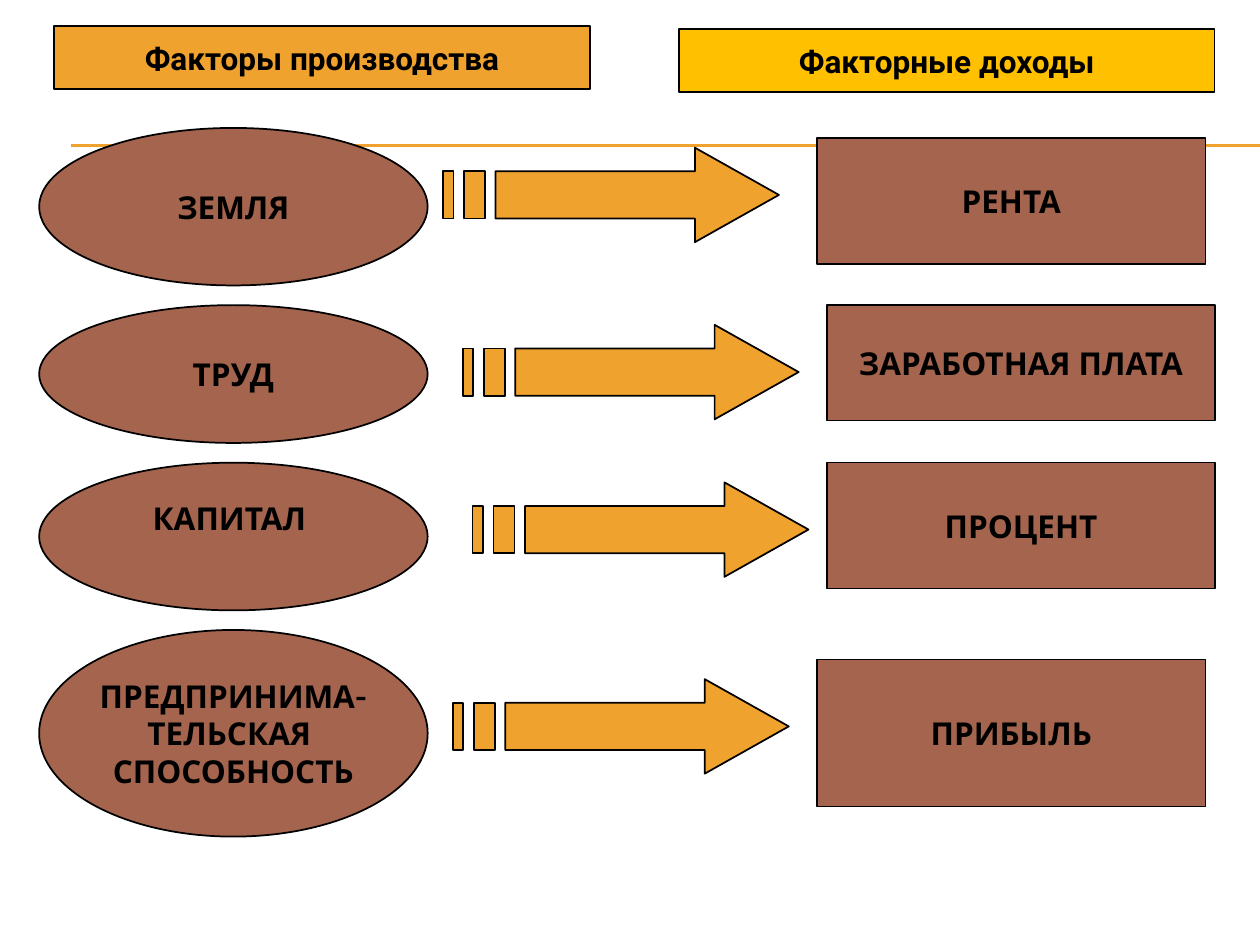
from lxml import etree
from pptx import Presentation
from pptx.dml.color import RGBColor
from pptx.enum.shapes import MSO_CONNECTOR, MSO_SHAPE as Shape
from pptx.enum.text import MSO_ANCHOR as Anchor, PP_ALIGN as Align
from pptx.oxml.ns import qn
from pptx.util import Pt

BLACK = RGBColor(0x00, 0x00, 0x00)
ORANGE = RGBColor(0xF0, 0xA2, 0x2E)
YELLOW = RGBColor(0xFF, 0xC0, 0x00)
BROWN = RGBColor(0xA5, 0x64, 0x4E)

FACTOR_LEFT, CARD_WIDTH = 22.4, 222
BLANK_LINE = 21.5

HEADINGS = [
    ("Факторы производства", 31, 14.9, ORANGE),
    ("Факторные доходы", 388, 16.7, YELLOW),
]

FACTORS = [
    ("ЗЕМЛЯ", 73.1, 90, 0),
    ("ТРУД", 174.4, 78.75, 0),
    ("КАПИТАЛ ", 264.4, 84.4, BLANK_LINE),
    ("ПРЕДПРИНИМА-\nТЕЛЬСКАЯ \nСПОСОБНОСТЬ", 360, 118.1, 0),
]

INCOMES = [
    ("РЕНТА", 466.9, 78.75, 72),
    ("ЗАРАБОТНАЯ ПЛАТА", 472.5, 174.4, 66),
    ("ПРОЦЕНТ", 472.5, 264.4, 72),
    ("ПРИБЫЛЬ", 466.9, 376.9, 84),
]

ARROWS = [(253.1, 84.4), (264.4, 185.6), (270, 275.6), (258.75, 388.1)]

SHAFT_TOP, SHAFT_BOTTOM = 13.5, 40.5
ARROW_BODY = [(144, 0), (144, SHAFT_TOP), (30, SHAFT_TOP), (30, SHAFT_BOTTOM),
              (144, SHAFT_BOTTOM), (144, 54), (192, 27)]
STRIPES = [(12, 24), (0, 6)]


def paint(shape, color):
    shape.shadow.inherit = False
    shape.fill.solid()
    shape.fill.fore_color.rgb = color
    shape.line.color.rgb = BLACK
    shape.line.width = Pt(1)


def write(shape, text, font="Karla", size=18, color=BLACK, bold=True, lift=0):
    frame = shape.text_frame
    frame.word_wrap = False
    frame.vertical_anchor = Anchor.MIDDLE
    frame.margin_bottom = Pt(3.6 + lift)
    frame.text = text
    for paragraph in frame.paragraphs:
        paragraph.alignment = Align.CENTER
        for run in paragraph.runs:
            run.font.name = font
            run.font.size = Pt(size)
            run.font.bold = bold
            run.font.color.rgb = color


def add_card(slide, kind, left, top, width, height, color, text, **style):
    card = slide.shapes.add_shape(kind, Pt(left), Pt(top), Pt(width), Pt(height))
    paint(card, color)
    write(card, text, **style)


def add_rule(slide, y):
    rule = slide.shapes.add_connector(
        MSO_CONNECTOR.STRAIGHT, Pt(40.5), Pt(y), Pt(720), Pt(y))
    rule.line.color.rgb = ORANGE
    rule.line.width = Pt(0.75)
    etree.SubElement(rule.line._get_or_add_ln().getparent(), qn("a:effectLst"))


def add_striped_arrow(slide, left, top):
    bars = [[(start, SHAFT_TOP), (start, SHAFT_BOTTOM),
             (end, SHAFT_BOTTOM), (end, SHAFT_TOP)] for start, end in STRIPES]
    body, *stripes = [[(Pt(x), Pt(y)) for x, y in outline]
                      for outline in [ARROW_BODY, *bars]]
    builder = slide.shapes.build_freeform(*body[0])
    builder.add_line_segments(body[1:], close=True)
    for stripe in stripes:
        builder.move_to(*stripe[0])
        builder.add_line_segments(stripe[1:], close=True)
    paint(builder.convert_to_shape(Pt(left), Pt(top)), ORANGE)


def main():
    deck = Presentation()
    deck.slide_width, deck.slide_height = Pt(720), Pt(540)
    slide = deck.slides.add_slide(deck.slide_layouts[6])

    for y in (82.8, 83.4):
        add_rule(slide, y)
    for text, left, top, color in HEADINGS:
        add_card(slide, Shape.RECTANGLE, left, top, 306, 36, color, text,
                 font="Roboto")
    for text, top, height, lift in FACTORS:
        add_card(slide, Shape.OVAL, FACTOR_LEFT, top, CARD_WIDTH, height, BROWN,
                 text, lift=lift)
    for text, left, top, height in INCOMES:
        add_card(slide, Shape.RECTANGLE, left, top, CARD_WIDTH, height, BROWN, text)
    for left, top in ARROWS:
        add_striped_arrow(slide, left, top)

    deck.save("out.pptx")


if __name__ == "__main__":
    main()
